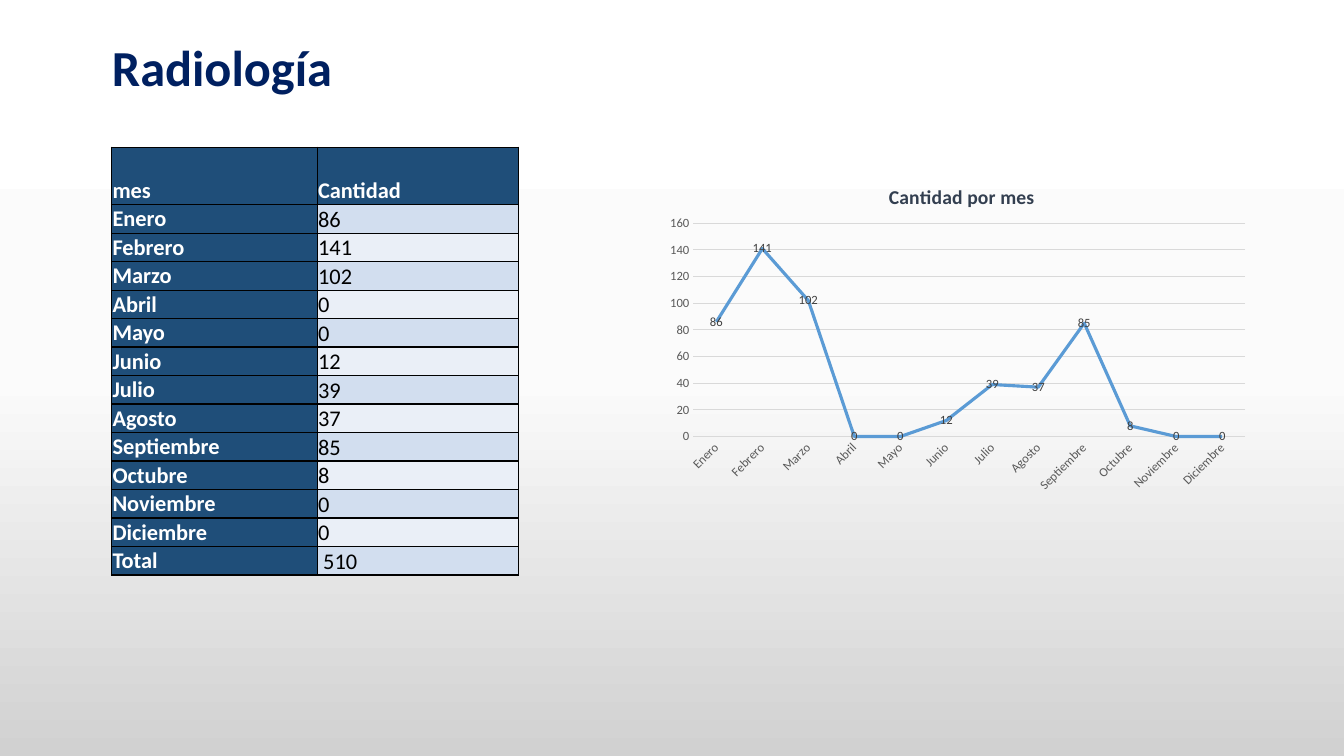
from lxml import etree
from pptx import Presentation
from pptx import util as u
from pptx.chart.data import CategoryChartData
from pptx.dml.color import RGBColor
from pptx.enum import chart as ch, text
from pptx.oxml.ns import qn

FONT = "Calibri"
COLORS = {
    "title": "002060", "heading": "1F4E79", "band": "D2DEEF", "light": "EAEFF7",
    "white": "FFFFFF", "black": "000000", "line": "5B9BD5", "grid": "D9D9D9",
    "axis": "595959", "label": "404040", "chart_title": "333F50",
    "middle": "FBFBFB", "bottom": "D1D1D1",
}
MONTHS = {
    "Enero": 86, "Febrero": 141, "Marzo": 102, "Abril": 0, "Mayo": 0,
    "Junio": 12, "Julio": 39, "Agosto": 37, "Septiembre": 85,
    "Octubre": 8, "Noviembre": 0, "Diciembre": 0,
}


def rgb(name):
    return RGBColor.from_string(COLORS[name])


def style_font(font, size, color, bold=False):
    font.name, font.size, font.bold = FONT, u.Pt(size), bold
    font.color.rgb = rgb(color)


def add_solid(parent, color):
    fill = etree.SubElement(parent, qn("a:solidFill"))
    etree.SubElement(fill, qn("a:srgbClr"), val=COLORS[color])


def set_layout(parent, index, **shares):
    """Fix a chart part's place, in shares of the chart's size."""
    for old in parent.findall(qn("c:layout")):
        parent.remove(old)
    layout = etree.Element(qn("c:layout"))
    parent.insert(index, layout)
    manual = etree.SubElement(layout, qn("c:manualLayout"))
    if "w" in shares:
        etree.SubElement(manual, qn("c:layoutTarget"), val="inner")
    for side in "xy":
        etree.SubElement(manual, qn(f"c:{side}Mode"), val="edge")
    for key, share in shares.items():
        etree.SubElement(manual, qn(f"c:{key}"), val=str(share))


class SlideBuilder:
    """Places elements by percentages of the slide's width and height."""

    def __init__(self, deck):
        self.deck = deck
        self.slide = deck.slides.add_slide(deck.slide_layouts[5])

    def across(self, percent):
        return round(self.deck.slide_width * percent / 100)

    def down(self, percent):
        return round(self.deck.slide_height * percent / 100)

    def place(self, left, top, width, height):
        return self.across(left), self.down(top), self.across(width), self.down(height)

    def background(self, colors):
        fill = self.slide.background.fill
        fill.gradient()
        fill.gradient_angle = 270
        stops = self.slide.element.find(".//" + qn("a:gsLst"))
        for stop in list(stops):
            stops.remove(stop)
        for i, color in enumerate(colors):
            position = 100000 * i // (len(colors) - 1)
            stop = etree.SubElement(stops, qn("a:gs"), pos=str(position))
            etree.SubElement(stop, qn("a:srgbClr"), val=COLORS[color])

    def title(self, words, *area):
        box = self.slide.shapes.title
        box.left, box.top, box.width, box.height = self.place(*area)
        frame = box.text_frame
        frame.text, frame.word_wrap = words, True
        frame.vertical_anchor = text.MSO_ANCHOR.MIDDLE
        para = frame.paragraphs[0]
        para.alignment, para.line_spacing = text.PP_ALIGN.LEFT, 0.9
        style_font(para.font, 36, "title", True)

    def cell(self, cell, words, fill, heading, anchor):
        cell.text = words
        cell.margin_left = cell.margin_right = cell.margin_top = u.Inches(0.01)
        cell.margin_bottom = 0
        cell.vertical_anchor = anchor
        style_font(cell.text_frame.paragraphs[0].font, 16,
                   "white" if heading else "black", heading)
        properties = cell._tc.get_or_add_tcPr()
        for side in "LRTB":
            border = etree.SubElement(properties, qn(f"a:ln{side}"), w=str(u.Pt(1)))
            add_solid(border, "black")
        cell.fill.solid()
        cell.fill.fore_color.rgb = rgb(fill)

    def table(self, rows, left, top, widths, header_height, row_height):
        height = header_height + row_height * (len(rows) - 1)
        area = self.place(left, top, sum(widths), height)
        table = self.slide.shapes.add_table(len(rows), len(widths), *area).table
        table.first_row = table.horz_banding = False
        for column, width in zip(table.columns, widths):
            column.width = self.across(width)
        for r, row in enumerate(rows):
            table.rows[r].height = self.down(row_height if r else header_height)
            for c, words in enumerate(row):
                heading = r == 0 or c == 0
                fill = "heading" if heading else "band" if r % 2 else "light"
                top_anchored = r > 0 and c == 0
                anchor = text.MSO_ANCHOR.TOP if top_anchored else text.MSO_ANCHOR.BOTTOM
                self.cell(table.cell(r, c), words, fill, heading, anchor)

    def line_chart(self, title, values, *area):
        data = CategoryChartData()
        data.categories = list(values)
        data.add_series("Cantidad", list(values.values()))
        chart = self.slide.shapes.add_chart(
            ch.XL_CHART_TYPE.LINE, *self.place(*area), data).chart
        style_font(chart.font, 10, "black")
        chart.has_legend = False
        chart.has_title = True
        chart.chart_title.include_in_layout = False
        frame = chart.chart_title.text_frame
        frame.text = title
        style_font(frame.paragraphs[0].font, 14, "chart_title", True)

        plot = chart.plots[0]
        plot.vary_by_categories = False
        series = plot.series[0]
        series.smooth = False
        series.format.line.color.rgb = rgb("line")
        series.format.line.width = u.Pt(2.25)
        labels = series.data_labels
        labels.show_value = True
        labels.position = ch.XL_LABEL_POSITION.CENTER
        style_font(labels.font, 9, "label")

        months, amounts = chart.category_axis, chart.value_axis
        for axis in (months, amounts):
            axis.major_tick_mark = axis.minor_tick_mark = ch.XL_TICK_MARK.NONE
            style_font(axis.tick_labels.font, 9, "axis")
        amounts.minimum_scale, amounts.maximum_scale, amounts.major_unit = 0, 160, 20
        amounts.format.line.fill.background()
        for line in (months.format.line, amounts.major_gridlines.format.line):
            line.color.rgb = rgb("grid")
            line.width = u.Pt(0.75)
        chart.element.find(f".//{qn('c:catAx')}/{qn('c:txPr')}/{qn('a:bodyPr')}").set(
            "rot", str(-45 * 60000))
        set_layout(chart.element.find(".//" + qn("c:title")), 1, x=0.38, y=0.05)
        set_layout(chart.element.find(".//" + qn("c:plotArea")), 0,
                   x=0.06, y=0.18, w=0.92, h=0.63)


def main():
    deck = Presentation()
    deck.slide_width, deck.slide_height = u.Inches(13.33), u.Inches(7.5)
    builder = SlideBuilder(deck)
    builder.background(["white", "middle", "bottom"])
    builder.title("Radiología", 7.58, 2.8, 64.14, 13.07)
    rows = [("mes", "Cantidad")]
    rows += [(month, str(amount)) for month, amount in MONTHS.items()]
    rows.append(("Total", f" {sum(MONTHS.values())}"))
    builder.table(rows, 8.3, 19.47, (15.3, 15), 7.6, 3.77)
    builder.line_chart("Cantidad por mes", MONTHS, 48.91, 21.47, 44.64, 44.8)
    deck.save("out.pptx")


if __name__ == "__main__":
    main()
